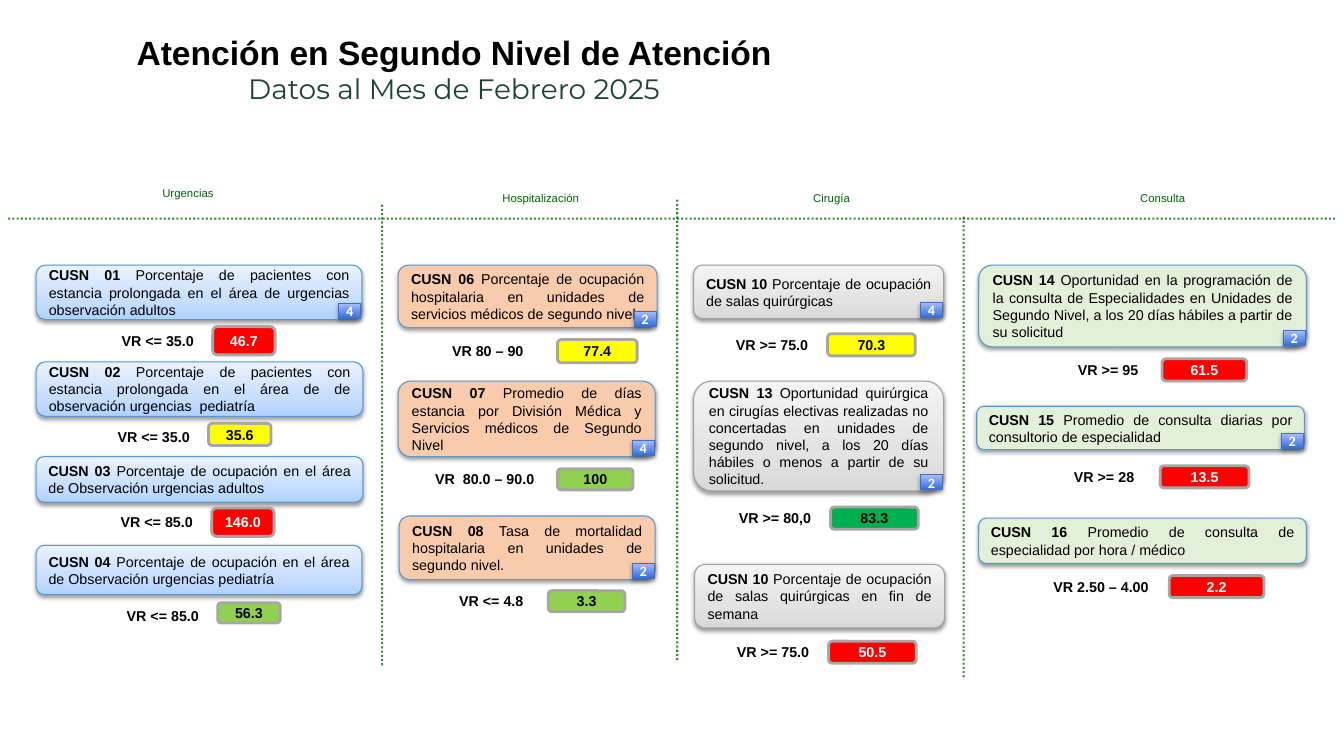
import pptx
import pptx.dml.color
import pptx.enum.dml
import pptx.enum.shapes
import pptx.enum.text
import pptx.oxml
import pptx.util

Pt = pptx.util.Pt
SHAPE = pptx.enum.shapes.MSO_SHAPE
ALIGN = pptx.enum.text.PP_ALIGN
NAMESPACE = 'xmlns:a="http://schemas.openxmlformats.org/drawingml/2006/main"'

BLUE = [(0, "B0D2FF"), (35, "C7DEFF"), (100, "EAF2FF")]
GRAY = [(0, "D8D8D8"), (35, "E3E3E3"), (100, "F4F4F4")]
BADGE = [(0, "316DD7"), (100, "A6BBFF")]
ORANGE, MINT = "F8CBAD", "E2F0D9"
RED, YELLOW, LIME, GREEN = "FF0000", "FFFF00", "92D050", "00B050"
BADGE_WIDTH, BADGE_HEIGHT, BADGE_MARGIN = 15.8, 10.8, 0.7

# Indicator: code, text, card box, badge, range, range width, value, status,
# value box as offset from the card's bottom left corner and size, range drop.
COLUMNS = [
    dict(name="Urgencias", header=(87.1, 130.3, 94.3), fill=BLUE, line="5698D3",
         range_gap=4.3, range_height=18.4, indicators=[
        ("CUSN 01", "Porcentaje de pacientes con estancia prolongada en el área de urgencias observación adultos",
         (25.9, 189.4, 232.6, 38.9), "4", "VR <= 35.0", 69.8, "46.7", RED, (126, 5, 44.6, 20.2), 0),
        ("CUSN 02", "Porcentaje de pacientes con estancia prolongada en el área de de observación urgencias  pediatría",
         (25.9, 258.5, 233.3, 38.9), "", "VR <= 35.0", 69.8, "35.6", YELLOW, (123.1, 5, 44.6, 15.8), 1.8),
        ("CUSN 03", "Porcentaje de ocupación en el área de Observación urgencias adultos",
         (25.9, 326.2, 233.3, 32.4), "", "VR <= 85.0", 69.8, "146.0", RED, (125.3, 4.3, 44.6, 20.2), 0),
        ("CUSN 04", "Porcentaje de ocupación en el área de Observación urgencias pediatría",
         (25.9, 389.5, 232.6, 35.3), "", "VR <= 85.0", 69.8, "56.3", LIME, (129.6, 5.8, 44.6, 14.4), 1.8)]),
    dict(name="Hospitalización", header=(303.8, 133.9, 164.9), fill=ORANGE, line="5698D3",
         range_gap=5.5, range_height=23, indicators=[
        ("CUSN 06", "Porcentaje de ocupación hospitalaria en unidades de servicios médicos de segundo nivel.",
         (284.4, 189.4, 185, 44.6), "2", "VR 80 – 90", 88.6, "77.4", YELLOW, (113.8, 8.6, 56.9, 16.6), 0),
        ("CUSN 07", "Promedio de días estancia por División Médica y Servicios médicos de Segundo Nivel",
         (284.4, 272.2, 183.6, 54), "4", "VR  80.0 – 90.0", 92.9, "100", LIME, (113.8, 8.6, 54, 15.1), 0),
        ("CUSN 08", "Tasa de mortalidad hospitalaria en unidades de segundo nivel.",
         (285.1, 368.6, 182.9, 45.4), "2", "VR <= 4.8", 70.6, "3.3", LIME, (106.6, 7.9, 54.7, 15.1), 0)]),
    dict(name="Cirugía", header=(536.4, 133.9, 115.2), fill=GRAY, line="A1A1A1",
         range_gap=5.5, range_height=23, indicators=[
        ("CUSN 10", "Porcentaje de ocupación de salas quirúrgicas",
         (495.4, 189.4, 178.6, 38.2), "4", "VR >= 75.0", 68.4, "70.3", YELLOW, (95.8, 10.8, 62.6, 15.8), 0),
        ("CUSN 13", "Oportunidad quirúrgica en cirugías electivas realizadas no concertadas en unidades "
                    "de segundo nivel, a los 20 días hábiles o menos a partir de su solicitud.",
         (495.4, 272.2, 178.6, 78.5), "2", "VR >= 80,0", 68.4, "83.3", GREEN, (97.9, 11.5, 62.6, 15.8), 0),
        ("CUSN 10", "Porcentaje de ocupación de salas quirúrgicas en fin de semana",
         (496.1, 403.2, 178.6, 45.4), "", "VR >= 75.0", 68.4, "50.5", RED, (95.8, 9.4, 62.6, 15.8), 0)]),
    dict(name="Consulta", header=(792, 133.9, 77), fill=MINT, line="5698D3",
         range_gap=5.5, range_height=23, indicators=[
        ("CUSN 14", "Oportunidad en la programación de la consulta de Especialidades en Unidades de "
                    "Segundo Nivel, a los 20 días hábiles a partir de su solicitud",
         (699.1, 189.4, 234, 58.3), "2", "VR >= 95", 66.2, "61.5", RED, (131, 8.6, 60.5, 15.8), 0),
        ("CUSN 15", "Promedio de consulta diarias por consultorio de especialidad",
         (697.7, 290.2, 234, 31), "2", "VR >= 28", 69.1, "13.5", RED, (131, 11.5, 63.4, 15.8), 0),
        ("CUSN 16", "Promedio de consulta de especialidad por hora / médico",
         (699.1, 370.1, 234, 32.4), "", "VR 2.50 – 4.00", 86.4, "2.2", RED, (136.1, 8.6, 67.7, 15.8), 0)]),
]
DIVIDERS = [(5.8, 156.2, 954.7, 156.2), (272.9, 146.2, 272.9, 476.6),
            (483.8, 142.6, 483.8, 473), (688.3, 154.8, 688.3, 485.3)]


def color(hex_value):
    """Turn a hex string into a colour."""
    return pptx.dml.color.RGBColor.from_string(hex_value)


def style_font(font, name, size, hex_value, bold=False):
    """Set the face, size, colour and weight of a font."""
    font.name, font.size, font.bold = name, Pt(size), bold
    font.color.rgb = color(hex_value)


def paint(shape, fill, line, line_width):
    """Give a shape a solid, gradient or empty fill and an outline."""
    shape.shadow.inherit = False
    if isinstance(fill, list):
        shape.fill.gradient()
        gradient = shape._element.spPr.find(pptx.oxml.ns.qn("a:gradFill"))
        stops = "".join(f'<a:gs pos="{position * 1000}"><a:srgbClr val="{value}"/></a:gs>'
                        for position, value in fill)
        gradient.getparent().replace(gradient, pptx.oxml.parse_xml(
            f'<a:gradFill {NAMESPACE} rotWithShape="1"><a:gsLst>{stops}</a:gsLst>'
            '<a:lin ang="16200000" scaled="0"/></a:gradFill>'))
    elif fill:
        shape.fill.solid()
        shape.fill.fore_color.rgb = color(fill)
    else:
        shape.fill.background()
    if line:
        shape.line.color.rgb = color(line)
        shape.line.width = Pt(line_width)
    else:
        shape.line.fill.background()


def cast_shadow(shape, opacity):
    """Add a soft black shadow below a shape."""
    effects = shape._element.spPr.find(pptx.oxml.ns.qn("a:effectLst"))
    effects.append(pptx.oxml.parse_xml(
        f'<a:outerShdw {NAMESPACE} blurRad="{Pt(3.1)}" dist="{Pt(1.6)}" dir="5400000" rotWithShape="0">'
        f'<a:srgbClr val="000000"><a:alpha val="{opacity * 1000}"/></a:srgbClr></a:outerShdw>'))


def add_box(slide, kind, box, fill=None, line=None, line_width=0.75, wrap=False):
    """Add a painted shape and return it with its first paragraph."""
    shape = slide.shapes.add_shape(kind, *map(Pt, box))
    paint(shape, fill, line, line_width)
    frame = shape.text_frame
    frame.word_wrap = wrap
    frame.margin_top = frame.margin_bottom = 0
    frame.vertical_anchor = pptx.enum.text.MSO_ANCHOR.MIDDLE
    paragraph = frame.paragraphs[0]
    paragraph.alignment = ALIGN.CENTER
    return shape, paragraph


def add_label(slide, box, text, hex_value="000000", fill=None, line=None):
    """Add a rounded box with one bold centred line of text."""
    paragraph = add_box(slide, SHAPE.ROUNDED_RECTANGLE, box, fill, line, 2)[1]
    paragraph.text = text
    style_font(paragraph.font, "Arial", 10.2, hex_value, True)


def draw_card(slide, box, code, text, fill, line, badge):
    """Draw the description card and its corner badge."""
    left, top, width, height = box
    card, paragraph = add_box(slide, SHAPE.ROUNDED_RECTANGLE, box, fill, line, wrap=True)
    cast_shadow(card, 38)
    paragraph.alignment = ALIGN.JUSTIFY
    for words, bold in ((code + " ", True), (text, False)):
        run = paragraph.add_run()
        run.text = words
        style_font(run.font, "Arial", 10.2, "000000", bold)
    if badge:
        corner = (left + width - BADGE_WIDTH - BADGE_MARGIN, top + height - BADGE_HEIGHT - BADGE_MARGIN,
                  BADGE_WIDTH, BADGE_HEIGHT)
        shape, paragraph = add_box(slide, SHAPE.RECTANGLE, corner, BADGE, "3F6FC3")
        cast_shadow(shape, 35)
        paragraph.text = badge
        style_font(paragraph.font, "Calibri", 10.2, "FFFFFF", True)


def draw_column(slide, column):
    """Draw a column's heading and its indicators with range and value."""
    left, top, width = column["header"]
    draw_text(slide, (left, top, width, 15.8), [(column["name"], "Arial", 8.1, "006600", False)], 0.9)
    for code, text, box, badge, limits, limits_width, value, status, offset, drop in column["indicators"]:
        draw_card(slide, box, code, text, column["fill"], column["line"], badge)
        across, below, value_width, value_height = offset
        value_left, value_top = box[0] + across, box[1] + box[3] + below
        limits_height = column["range_height"]
        add_label(slide, (value_left - column["range_gap"] - limits_width,
                          value_top + (value_height - limits_height) / 2 + drop,
                          limits_width, limits_height), limits)
        add_label(slide, (value_left, value_top, value_width, value_height), value,
                  "FFFFFF" if status == RED else "000000", status, "A6A6A6")


def draw_text(slide, box, lines, spacing=None, margins=(7.2, 3.6)):
    """Draw a text box of centred lines."""
    frame = slide.shapes.add_textbox(*map(Pt, box)).text_frame
    frame.word_wrap = True
    frame.margin_left = frame.margin_right = Pt(margins[0])
    frame.margin_top = frame.margin_bottom = Pt(margins[1])
    for index, (text, *font) in enumerate(lines):
        paragraph = frame.add_paragraph() if index else frame.paragraphs[0]
        paragraph.text = text
        paragraph.alignment = ALIGN.CENTER
        paragraph.line_spacing = spacing
        style_font(paragraph.font, *font)


def draw_divider(slide, ends):
    """Draw a dotted translucent green line."""
    line = slide.shapes.add_connector(pptx.enum.shapes.MSO_CONNECTOR.STRAIGHT, *map(Pt, ends))
    line.line.color.rgb = color("006800")
    line.line.width = Pt(1.5)
    line.line.dash_style = pptx.enum.dml.MSO_LINE.ROUND_DOT
    properties = line._element.spPr
    shade = next(properties.iter(pptx.oxml.ns.qn("a:srgbClr")))
    shade.append(pptx.oxml.parse_xml(f'<a:alpha {NAMESPACE} val="77000"/>'))
    properties.append(pptx.oxml.parse_xml(f"<a:effectLst {NAMESPACE}/>"))


def main():
    """Build and save the slide."""
    presentation = pptx.Presentation()
    presentation.slide_width, presentation.slide_height = Pt(960), Pt(540)
    slide = presentation.slides.add_slide(presentation.slide_layouts[6])
    for ends in DIVIDERS:
        draw_divider(slide, ends)
    for column in COLUMNS:
        draw_column(slide, column)
    draw_text(slide, (5.8, 20.2, 637.2, 58.3),
              [("Atención en Segundo Nivel de Atención", "Arial", 24, "000000", True),
               ("Datos al Mes de Febrero 2025", "Montserrat", 20, "1E4236", False)], margins=(5, 2.2))
    presentation.save("out.pptx")


if __name__ == "__main__":
    main()
